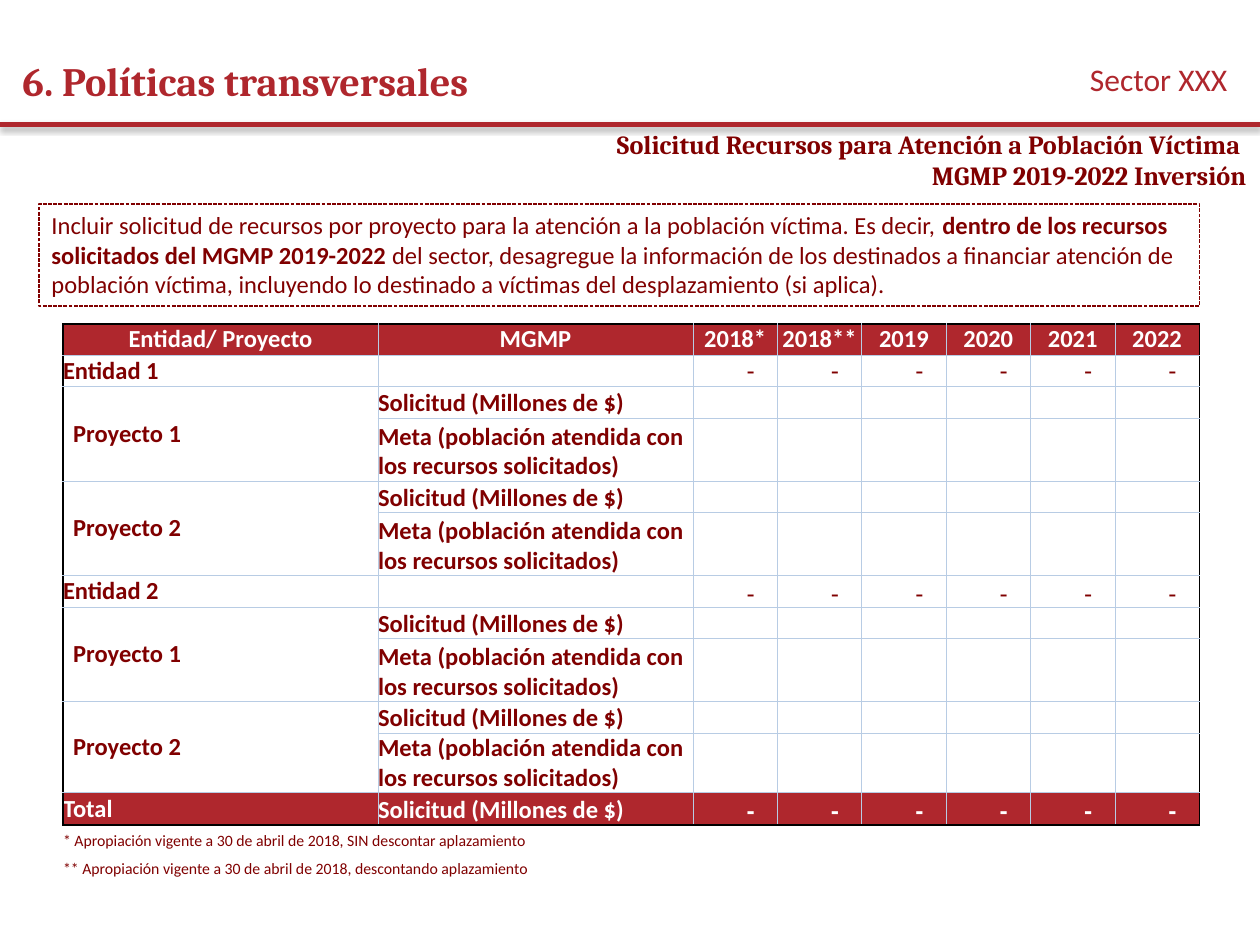
import pptx
import pptx.util
import pptx.dml.color
import pptx.enum.dml
import pptx.enum.shapes
import pptx.enum.text
import pptx.oxml
import pptx.oxml.ns
from lxml import etree

Inches = pptx.util.Inches
Pt = pptx.util.Pt
ALIGN = pptx.enum.text.PP_ALIGN
ANCHOR = pptx.enum.text.MSO_ANCHOR
NAMESPACE = pptx.oxml.ns.nsdecls("a")

RED = "AF272D"
MAROON = "800000"
WHITE = "FFFFFF"
PALE = ("B8CCE4", 0.5)
BLACK = ("000000", 1)

YEARS = ["2018*", "2018**", "2019", "2020", "2021", "2022"]
REQUEST = "Solicitud (Millones de $)"
GOAL = "Meta (población atendida con los recursos solicitados)"
NOTES = [
    "* Apropiación vigente a 30 de abril de 2018, SIN descontar aplazamiento",
    "** Apropiación vigente a 30 de abril de 2018, descontando aplazamiento",
]
COLUMN_WIDTHS = [2.5, 2.5] + [0.67] * len(YEARS)
ROW_HEIGHTS = [0.25, 0.25, 0.25, 0.5, 0.25, 0.5, 0.25, 0.25, 0.5, 0.25, 0.46, 0.26, 0.26, 0.18]
ENTITY_ROWS = {1: "Entidad 1", 6: "Entidad 2"}
TOTAL_ROW = 11


def color(value):
    return pptx.dml.color.RGBColor.from_string(value)


def format_font(font, size, value, bold=False, name="Calibri"):
    font.size = Pt(size)
    font.name = name
    font.bold = bold
    font.color.rgb = color(value)


def add_text(slide, box, lines, size, value, bold=False, name="Calibri",
             align=ALIGN.LEFT, anchor=ANCHOR.MIDDLE):
    shape = slide.shapes.add_textbox(*map(Inches, box))
    frame = shape.text_frame
    frame.word_wrap = True
    frame.vertical_anchor = anchor
    frame.text = "\n".join(lines)
    for paragraph in frame.paragraphs:
        paragraph.alignment = align
        format_font(paragraph.runs[0].font, size, value, bold, name)


def add_header_rule(slide, left, top, width):
    line = slide.shapes.add_connector(
        pptx.enum.shapes.MSO_CONNECTOR.STRAIGHT,
        Inches(left), Inches(top), Inches(left + width), Inches(top))
    line.line.color.rgb = color(RED)
    line.line.width = Pt(3)
    line._element.spPr.append(pptx.oxml.parse_xml(
        f'<a:effectLst {NAMESPACE}><a:outerShdw blurRad="{Pt(3.1)}" dist="{Pt(1.8)}" '
        'dir="5400000" rotWithShape="0"><a:srgbClr val="000000"><a:alpha val="35000"/>'
        '</a:srgbClr></a:outerShdw></a:effectLst>'))


def add_instructions(slide, box):
    shape = slide.shapes.add_shape(pptx.enum.shapes.MSO_SHAPE.RECTANGLE, *map(Inches, box))
    shape.shadow.inherit = False
    shape.fill.background()
    shape.line.color.rgb = color(MAROON)
    shape.line.width = Pt(0.75)
    shape.line.dash_style = pptx.enum.dml.MSO_LINE.SQUARE_DOT
    frame = shape.text_frame
    frame.word_wrap = True
    frame.vertical_anchor = ANCHOR.TOP
    paragraph = frame.paragraphs[0]
    paragraph.alignment = ALIGN.LEFT
    parts = [
        ("Incluir solicitud de recursos por proyecto para la atención a la población "
         "víctima. Es decir, ", False),
        ("dentro de los recursos solicitados del MGMP 2019-2022", True),
        (" del sector, desagregue la información de los destinados a financiar atención de "
         "población víctima, incluyendo lo destinado a víctimas del desplazamiento "
         "(si aplica).", False),
    ]
    for text, bold in parts:
        run = paragraph.add_run()
        run.text = text
        format_font(run.font, 14, MAROON, bold)


def set_borders(cell, borders):
    properties = cell._tc.get_or_add_tcPr()
    for index, (side, border) in enumerate(zip("LRTB", borders)):
        if border:
            line = (f'<a:ln{side} {NAMESPACE} w="{Pt(border[1])}"><a:solidFill>'
                    f'<a:srgbClr val="{border[0]}"/></a:solidFill></a:ln{side}>')
        else:
            line = f'<a:ln{side} {NAMESPACE} w="0"><a:noFill/></a:ln{side}>'
        properties.insert(index, pptx.oxml.parse_xml(line))


def style_cell(cell, row, column):
    cell.margin_left = cell.margin_right = cell.margin_top = cell.margin_bottom = 0
    if row in (0, TOTAL_ROW):
        cell.fill.solid()
        cell.fill.fore_color.rgb = color(RED)
    else:
        cell.fill.background()
    if row > TOTAL_ROW:
        set_borders(cell, [None, None, BLACK if row == TOTAL_ROW + 1 else None, None])
    else:
        set_borders(cell, [
            BLACK if column == 0 else PALE,
            BLACK if column == len(COLUMN_WIDTHS) - 1 else PALE,
            BLACK if row == 0 else PALE,
            BLACK if row == TOTAL_ROW else PALE,
        ])
    ending = etree.SubElement(cell.text_frame.paragraphs[0]._p, pptx.oxml.ns.qn("a:endParaRPr"))
    ending.set("sz", "900")


def write_cell(cell, text, value=MAROON, size=14, bold=True, name="Calibri",
               align=ALIGN.LEFT, anchor=ANCHOR.MIDDLE):
    cell.text_frame.text = text
    cell.vertical_anchor = anchor
    paragraph = cell.text_frame.paragraphs[0]
    paragraph.alignment = align
    format_font(paragraph.runs[0].font, size, value, bold, name)


def write_dashes(table, row, value, bold, anchor):
    for column in range(2, len(COLUMN_WIDTHS)):
        cell = table.cell(row, column)
        cell.margin_right = Inches(0.18)
        write_cell(cell, "-", value, bold=bold, name="Arial", align=ALIGN.RIGHT, anchor=anchor)


def add_project(table, row, name):
    cell = table.cell(row, 0)
    cell.merge(table.cell(row + 1, 0))
    cell.margin_left = Inches(0.08)
    write_cell(cell, name)
    for offset, text in enumerate([REQUEST, GOAL]):
        write_cell(table.cell(row + offset, 1), text, anchor=ANCHOR.BOTTOM)


def add_budget_table(slide, box):
    table = slide.shapes.add_table(
        len(ROW_HEIGHTS), len(COLUMN_WIDTHS), *map(Inches, box)).table
    table.first_row = table.horz_banding = False
    for column, width in zip(table.columns, COLUMN_WIDTHS):
        column.width = Inches(width)
    for row, height in zip(table.rows, ROW_HEIGHTS):
        row.height = Inches(height)
    for row in range(len(ROW_HEIGHTS)):
        for column in range(len(COLUMN_WIDTHS)):
            style_cell(table.cell(row, column), row, column)

    for column, text in enumerate(["Entidad/ Proyecto", "MGMP"] + YEARS):
        write_cell(table.cell(0, column), text, WHITE, align=ALIGN.CENTER)
    for row, name in ENTITY_ROWS.items():
        write_cell(table.cell(row, 0), name)
        write_dashes(table, row, MAROON, False, ANCHOR.MIDDLE if row == 1 else ANCHOR.BOTTOM)
        add_project(table, row + 1, "Proyecto 1")
        add_project(table, row + 3, "Proyecto 2")
    write_cell(table.cell(TOTAL_ROW, 0), "Total", WHITE)
    write_cell(table.cell(TOTAL_ROW, 1), REQUEST, WHITE, anchor=ANCHOR.BOTTOM)
    write_dashes(table, TOTAL_ROW, WHITE, True, ANCHOR.BOTTOM)
    for row, text in enumerate(NOTES, TOTAL_ROW + 1):
        cell = table.cell(row, 0)
        cell.merge(table.cell(row, 1))
        write_cell(cell, text, size=9, bold=False)


def main():
    presentation = pptx.Presentation()
    presentation.slide_width = Inches(10)
    presentation.slide_height = Inches(7.5)
    slide = presentation.slides.add_slide(presentation.slide_layouts[6])
    add_header_rule(slide, 0, 0.99, 10)
    add_text(slide, (1.4, 1.07, 8.59, 0.39),
             ["Solicitud Recursos para Atención a Población Víctima ", "MGMP 2019-2022 Inversión"],
             15, MAROON, True, "Cambria", ALIGN.RIGHT)
    add_text(slide, (0.08, 0.36, 8.3, 0.55), ["6. Políticas transversales"],
             23, RED, True, "Cambria")
    add_text(slide, (6.93, 0.43, 2.91, 0.4), ["Sector XXX"], 18, RED,
             align=ALIGN.RIGHT, anchor=ANCHOR.TOP)
    add_instructions(slide, (0.31, 1.62, 9.21, 0.81))
    add_budget_table(slide, (0.5, 2.57, 9, 4.42))
    presentation.save("out.pptx")


if __name__ == "__main__":
    main()
